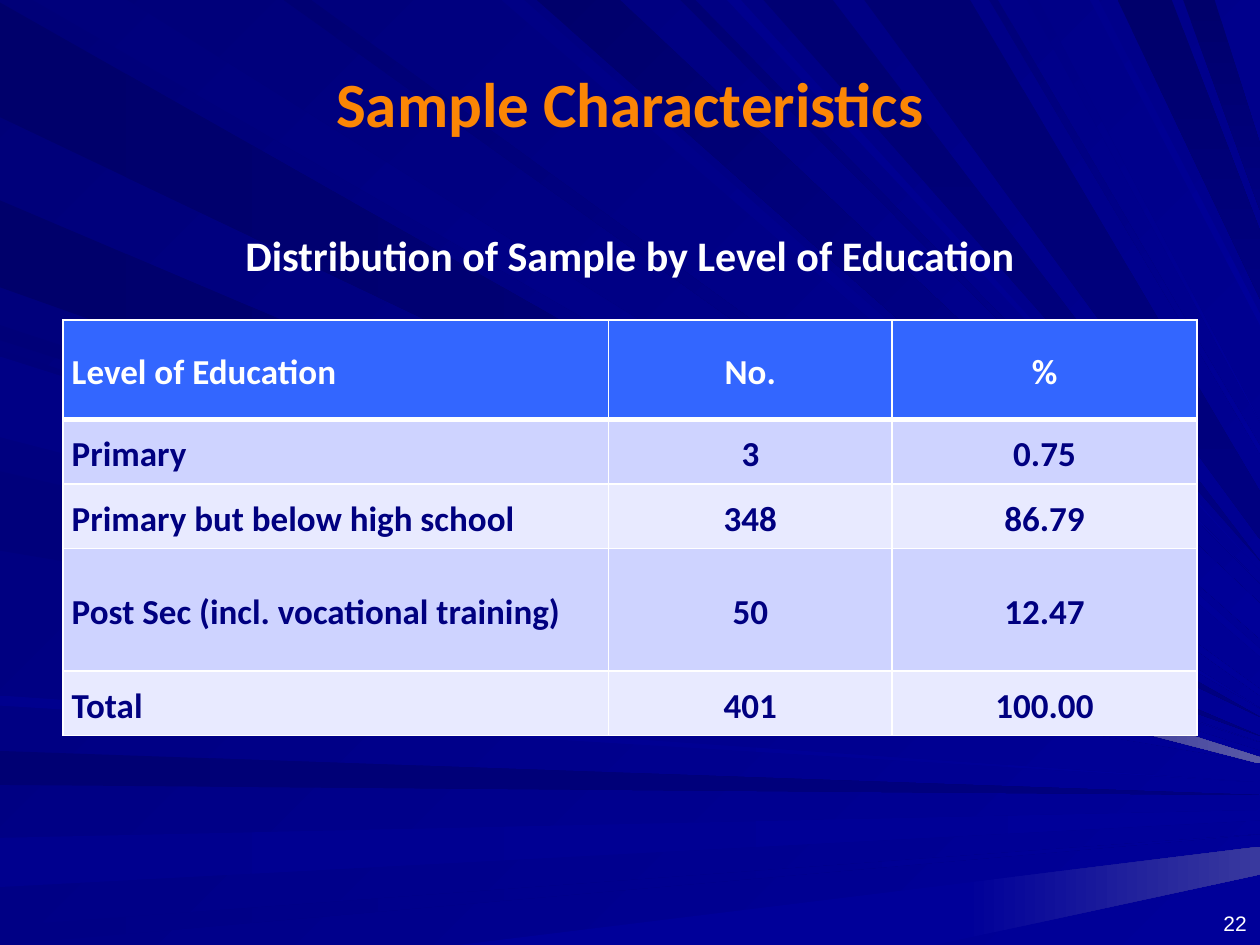
from lxml.etree import SubElement
from pptx import Presentation
from pptx.dml.color import RGBColor
from pptx.enum.text import MSO_ANCHOR, PP_ALIGN
from pptx.oxml.ns import qn
from pptx.util import Pt

COLORS = {
    "back_dark": "000078", "blue": "000099", "navy": "000080",
    "ink": "00006B", "deep": "000073", "mid": "00007B", "soft": "000085",
    "bright": "00008E", "glow": "5A5AA6", "glimmer": "39399E",
    "title": "FB8605", "white": "FFFFFF",
    "header": "3366FF", "band_dark": "CED3FF", "band_light": "E8EAFF",
}

# Background rays: edge where the ray starts, start and end colour, the two
# places on that edge, and the height where it meets the right edge
# (hundredths of an inch), with the width left there if it is blunt
RAYS = [
    ("left", "ink", "navy", 2, 93, 569),
    ("top", "mid", "blue", 26, 101, 562),
    ("left", "deep", "navy", 596, 623, 631),
    ("left", "bright", "blue", 665, 704, 643, 8),
    ("left", "soft", "blue", 735, 750, 662),
    ("bottom", "blue", "glimmer", 364, 742, 672, 22),
    ("left", "back_dark", "blue", 258, 270, 589),
    ("left", "ink", "navy", 159, 228, 584),
    ("top", "soft", "blue", 398, 416, 515, 6),
    ("top", "ink", "blue", 426, 492, 479, 28),
    ("top", "deep", "blue", 540, 552, 463),
    ("top", "deep", "navy", 606, 661, 445),
    ("top", "ink", "navy", 887, 930, 183, 54),
    ("top", "ink", "navy", 939, 964, 114, 53),
    ("left", "mid", "blue", 278, 342, 596, 6),
    ("left", "mid", "blue", 374, 437, 605),
    ("left", "bright", "blue", 552, 560, 621),
    ("top", "deep", "blue", 225, 247, 547, 5),
    ("top", "bright", "blue", 577, 588, 453),
    ("top", "deep", "navy", 686, 770, 390, 38),
    ("top", "back_dark", "blue", 785, 792, 354, 6),
    ("top", "soft", "blue", 815, 824, 335),
    ("top", "bright", "blue", 865, 872, 249, 9),
    ("left", "soft", "glow", 283, 347, 601, 5),
]

ROWS = [
    ("Level of Education", "No.", "%"),
    ("Primary", "3", "0.75"),
    ("Primary but below high school", "348", "86.79"),
    ("Post Sec (incl. vocational training)", "50", "12.47"),
    ("Total", "401", "100.00"),
]
COL_WIDTHS = [311.8, 162, 174.2]
ROW_HEIGHTS = [56.9, 36.8, 36.8, 70, 36.8]


def paint(fill, start, end, angle):
    """Fill with a two-colour gradient at a clockwise angle."""
    fill.gradient()
    fill.gradient_angle = -angle % 360
    for stop, color in zip(fill.gradient_stops, (start, end)):
        stop.color.rgb = RGBColor.from_string(COLORS[color])


def write(tf, text, size, color, align, font="Calibri", bold=True):
    tf.word_wrap = True
    tf.text = text
    p = tf.paragraphs[0]
    p.alignment = align
    f = p.runs[0].font
    f.name, f.size, f.bold = font, Pt(size), bold
    f.color.rgb = RGBColor.from_string(COLORS[color])


prs = Presentation()
prs.slide_width, prs.slide_height = Pt(720), Pt(540)
s = prs.slides.add_slide(prs.slide_layouts[5])

# Background
paint(s.background.fill, "back_dark", "blue", 45)
rays = s.shapes.add_group_shape()
for edge, start, end, near, far, meet, *blunt in RAYS:
    if edge == "left":
        first, last = (0, far), (0, near)
    else:
        y = 0 if edge == "top" else 750
        first, last = (near, y), (far, y)
    tip = [(1000, meet + sum(blunt)), (1000, meet)]
    if edge == "bottom":
        tip.reverse()
    builder = rays.shapes.build_freeform(*first, scale=Pt(0.72))
    builder.add_line_segments([*tip, last], close=True)
    sp = builder.convert_to_shape()
    sp.shadow.inherit = False
    sp.line.fill.background()
    angle = 0 if edge != "top" else 90 if end == "navy" else 45
    paint(sp.fill, start, end, angle)
    if end in ("glow", "glimmer"):  # only the tip lights up
        sp.fill.gradient_stops[0].position = 0.63
s.shapes._spTree.insert(2, rays._element)  # behind the title

# Title and subtitle
title = s.shapes.title
title.left, title.top, title.width, title.height = Pt(36), Pt(21.6), Pt(648), Pt(74)
title.text_frame.vertical_anchor = MSO_ANCHOR.MIDDLE
write(title.text_frame, "Sample Characteristics", 36, "title", PP_ALIGN.CENTER)

subtitle = s.shapes.add_textbox(Pt(36), Pt(127.5), Pt(648), Pt(36))
write(subtitle.text_frame, "Distribution of Sample by Level of Education", 24, "white",
      PP_ALIGN.CENTER)

# Table
table = s.shapes.add_table(len(ROWS), len(COL_WIDTHS), Pt(36), Pt(182.9),
                           Pt(sum(COL_WIDTHS)), Pt(sum(ROW_HEIGHTS))).table
for column, width in zip(table.columns, COL_WIDTHS):
    column.width = Pt(width)
for i, (values, height) in enumerate(zip(ROWS, ROW_HEIGHTS)):
    table.rows[i].height = Pt(height)
    band = "header" if i == 0 else "band_dark" if i % 2 else "band_light"
    for j, value in enumerate(values):
        cell = table.cell(i, j)
        cell.vertical_anchor = MSO_ANCHOR.MIDDLE
        cell.margin_left = cell.margin_right = Pt(5)
        cell.margin_top = cell.margin_bottom = 0
        write(cell.text_frame, value, 20, "navy" if i else "white",
              PP_ALIGN.CENTER if j else PP_ALIGN.LEFT)
        cell.text_frame.paragraphs[0].line_spacing = 1.15
        tcPr = cell._tc.get_or_add_tcPr()
        for side in ("L", "R", "T", "B"):
            under_header = (i, side) in ((0, "B"), (1, "T"))
            ln = SubElement(tcPr, qn(f"a:ln{side}"), w=str(Pt(3 if under_header else 1)))
            SubElement(SubElement(ln, qn("a:solidFill")), qn("a:srgbClr"), val=COLORS["white"])
        cell.fill.solid()
        cell.fill.fore_color.rgb = RGBColor.from_string(COLORS[band])

# Slide number
number = s.shapes.add_textbox(Pt(551.5), Pt(509), Pt(168), Pt(29))
number.text_frame.vertical_anchor = MSO_ANCHOR.BOTTOM
write(number.text_frame, "22", 12, "white", PP_ALIGN.RIGHT, font="Arial", bold=False)

prs.save("out.pptx")
